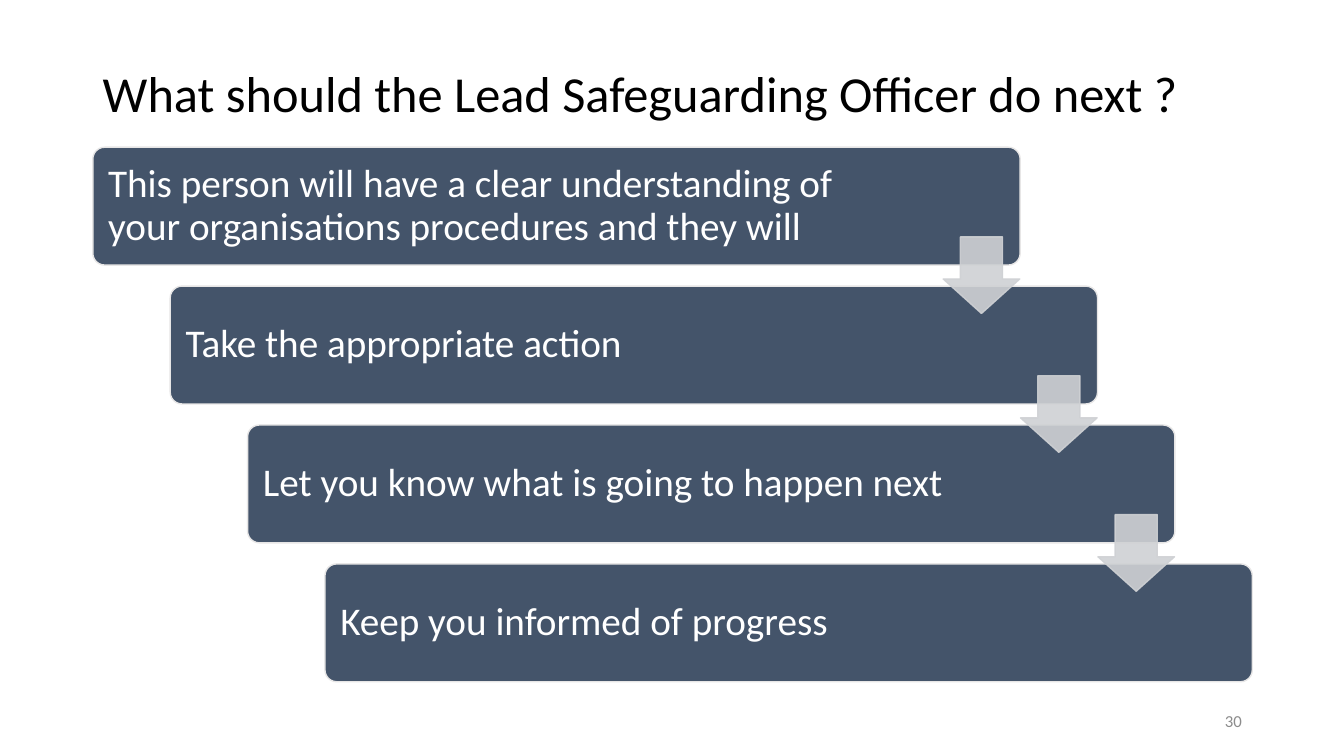
from dataclasses import dataclass

from lxml import etree
from pptx import Presentation
from pptx.dml.color import RGBColor
from pptx.enum.shapes import MSO_SHAPE
from pptx.enum.text import MSO_ANCHOR, PP_ALIGN
from pptx.oxml.ns import qn
from pptx.util import Cm, Pt

ROUND = MSO_SHAPE.ROUNDED_RECTANGLE
DOWN = MSO_SHAPE.DOWN_ARROW
TOP, MIDDLE = MSO_ANCHOR.TOP, MSO_ANCHOR.MIDDLE
LEFT, RIGHT = PP_ALIGN.LEFT, PP_ALIGN.RIGHT

COLORS = {
    "title": "000000",
    "step": "44546A",
    "edge": "E7E6E6",
    "text": "FFFFFF",
    "arrow": "CFD1D4",
    "number": "8C8C8C",
}
FONT = "Calibri"
SHIFT, DROP = 1.95, 3.5
STEPS = [
    "This person will have a clear understanding of your organisations procedures and they will",
    "Take the appropriate action",
    "Let you know what is going to happen next",
    "Keep you informed of progress",
]


@dataclass(frozen=True)
class Box:
    left: float
    top: float
    width: float
    height: float

    def move(self, index: int) -> "Box":
        return Box(self.left + index * SHIFT, self.top + index * DROP,
                   self.width, self.height)

    def place(self) -> tuple:
        return Cm(self.left), Cm(self.top), Cm(self.width), Cm(self.height)


STEP = Box(2.34, 3.71, 23.37, 2.97)
ARROW = Box(23.77, 5.97, 1.93, 1.93)
TITLE = Box(2.34, 1.55, 29.21, 3.15)
NUMBER = Box(23.93, 17.65, 7.62, 1.02)


def color(name: str) -> RGBColor:
    return RGBColor.from_string(COLORS[name])


def write(shape, text: str, *, size: float, ink: str, align=LEFT, anchor=MIDDLE,
          spacing: float = 1.0, insets: tuple = (0.25, 0.13, 0.25, 0.13)) -> None:
    frame = shape.text_frame
    frame.word_wrap = True
    frame.vertical_anchor = anchor
    (frame.margin_left, frame.margin_top,
     frame.margin_right, frame.margin_bottom) = map(Cm, insets)
    para = frame.paragraphs[0]
    para.alignment = align
    para.line_spacing = spacing
    run = para.add_run()
    run.text = text
    run.font.name = FONT
    run.font.size = Pt(size)
    run.font.color.rgb = color(ink)


def draw(slide, kind, box: Box, fill: str, edge: str, adjust: tuple):
    shape = slide.shapes.add_shape(kind, *box.place())
    shape.shadow.inherit = False
    shape.fill.solid()
    shape.fill.fore_color.rgb = color(fill)
    shape.line.color.rgb = color(edge)
    shape.line.width = Pt(1)
    for index, value in enumerate(adjust):
        shape.adjustments[index] = value
    return shape


def fade(shape, percent: int) -> None:
    for tint in shape.element.spPr.iter(qn("a:srgbClr")):
        etree.SubElement(tint, qn("a:alpha"), val=str(percent * 1000))


def main() -> None:
    deck = Presentation()
    deck.slide_width, deck.slide_height = Cm(33.87), Cm(19.05)
    slide = deck.slides.add_slide(deck.slide_layouts[6])

    title = slide.shapes.add_textbox(*TITLE.place())
    write(title, "What should the Lead Safeguarding Officer do next ?", size=36,
          ink="title", anchor=TOP, spacing=0.9, insets=(0.25, 0.18, 0.25, 0.13))

    for index, text in enumerate(STEPS):
        step = draw(slide, ROUND, STEP.move(index), "step", "edge", (0.1,))
        write(step, text, size=28, ink="text", spacing=0.9,
              insets=(0.3, 0.3, 3.6, 0.3))

    for index in range(len(STEPS) - 1):
        arrow = draw(slide, DOWN, ARROW.move(index), "arrow", "arrow", (0.55, 0.45))
        fade(arrow, 90)

    number = slide.shapes.add_textbox(*NUMBER.place())
    write(number, "30", size=12, ink="number", align=RIGHT)

    deck.save("out.pptx")


if __name__ == "__main__":
    main()
